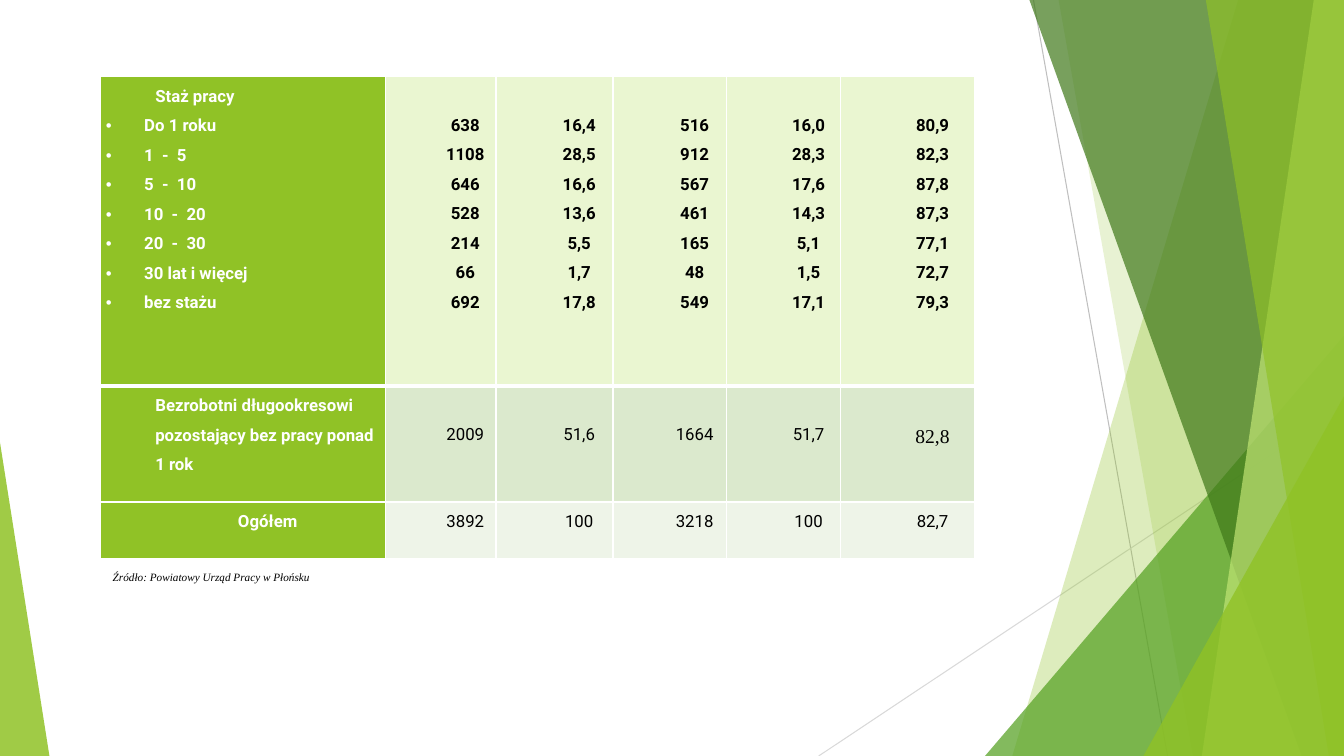
from lxml.etree import SubElement
from pptx import Presentation
from pptx.dml.color import RGBColor
from pptx.enum.shapes import MSO_CONNECTOR, MSO_SHAPE
from pptx.enum.text import MSO_AUTO_SIZE, PP_ALIGN
from pptx.oxml.ns import qn
from pptx.util import Inches, Pt

GREEN, WHITE, BLACK = "90C226", "FFFFFF", "000000"
COLUMN_WIDTHS = [2.82, 1.1, 1.16, 1.13, 1.13, 1.33]
ROW_HEIGHTS = [3.07, 1.15, 0.56]
ROW_FILLS = ["EAF6D1", "DBE9CD", "EEF4E8"]
LINE_HEIGHT = 0.29
TENURE = [
    ("Do 1 roku", "638", "16,4", "516", "16,0", "80,9"),
    ("1  -  5", "1108", "28,5", "912", "28,3", "82,3"),
    ("5  -  10", "646", "16,6", "567", "17,6", "87,8"),
    ("10  -  20", "528", "13,6", "461", "14,3", "87,3"),
    ("20  -  30", "214", "5,5", "165", "5,1", "77,1"),
    ("30 lat i więcej", "66", "1,7", "48", "1,5", "72,7"),
    ("bez stażu", "692", "17,8", "549", "17,1", "79,3"),
]
LONG_TERM = ["2009", "51,6", "1664", "51,7", "82,8"]
TOTAL = ["3892", "100", "3218", "100", "82,7"]


def color(value):
    """Turn a hex string into a colour."""
    return RGBColor.from_string(value)


def paint(shape, fill, opacity):
    """Give a shape a translucent fill with no line and no shadow."""
    shape.shadow.inherit = False
    shape.line.fill.background()
    shape.fill.solid()
    shape.fill.fore_color.rgb = color(fill)
    element = shape.fill._xPr.find(qn("a:solidFill"))[0]
    SubElement(element, qn("a:alpha"), val=str(opacity * 1000))


def add_band(slide, points, fill, opacity):
    """Draw a translucent polygon."""
    corners = [(Inches(x), Inches(y)) for x, y in points]
    builder = slide.shapes.build_freeform(*corners[0])
    builder.add_line_segments(corners[1:], close=True)
    paint(builder.convert_to_shape(), fill, opacity)


def add_triangle(slide, box, apex, fill, opacity):
    """Draw a translucent triangle with its apex at a share of the width."""
    shape = slide.shapes.add_shape(MSO_SHAPE.ISOSCELES_TRIANGLE, *map(Inches, box))
    shape.adjustments[0] = apex
    paint(shape, fill, opacity)


def add_line(slide, points, line_color):
    """Draw a thin straight line."""
    line = slide.shapes.add_connector(MSO_CONNECTOR.STRAIGHT, *map(Inches, points))
    line.line.color.rgb = color(line_color)
    line.line.width = Pt(0.75)
    SubElement(line._element.spPr, qn("a:effectLst"))


def write(frame, text, size=12, font="Roboto", text_color=BLACK, bold=False, italic=False,
          align=PP_ALIGN.LEFT, left=0.49, indent=0, bullet=None):
    """Add a formatted paragraph, using the first one while it is empty."""
    paragraph = frame.paragraphs[0]
    if paragraph.runs:
        paragraph = frame.add_paragraph()
    paragraph.alignment = align
    paragraph.line_spacing = 1.5
    properties = paragraph._p.get_or_add_pPr()
    properties.set("marL", str(Inches(left)))
    properties.set("indent", str(Inches(indent)))
    if bullet:
        SubElement(properties, qn("a:buFont"), typeface="Arial")
        SubElement(properties, qn("a:buChar"), char=bullet)
    run = paragraph.add_run()
    run.text = text
    run.font.size = Pt(size)
    run.font.name = font
    run.font.bold = bold
    run.font.italic = italic
    run.font.color.rgb = color(text_color)


def add_border(cell, side, width):
    """Draw a white border on one side of a cell."""
    properties = cell._tc.get_or_add_tcPr()
    line = SubElement(properties, qn(f"a:ln{side}"), w=str(Pt(width)))
    SubElement(SubElement(line, qn("a:solidFill")), qn("a:srgbClr"), val=WHITE)


def format_cell(cell, fill, top_width, bottom_width):
    """Set the margins, borders and fill of a cell."""
    cell.margin_left = cell.margin_right = Inches(0.05)
    cell.margin_top = cell.margin_bottom = 0
    for side, width in zip("LRTB", (1, 1, top_width, bottom_width)):
        add_border(cell, side, width)
    cell.fill.solid()
    cell.fill.fore_color.rgb = color(fill)


def add_grid(slide):
    """Add the empty table with its widths, heights and fills."""
    table = slide.shapes.add_table(
        len(ROW_HEIGHTS), len(COLUMN_WIDTHS), Inches(1), Inches(0.76),
        Inches(sum(COLUMN_WIDTHS)), Inches(sum(ROW_HEIGHTS))).table
    table.first_row = table.horz_banding = False
    for column, width in zip(table.columns, COLUMN_WIDTHS):
        column.width = Inches(width)
    for index, height in enumerate(ROW_HEIGHTS):
        table.rows[index].height = Inches(height)
        for position, cell in enumerate(table.rows[index].cells):
            format_cell(cell, ROW_FILLS[index] if position else GREEN,
                        3 if index == 1 else 1, 3 if index == 0 else 1)
    return table


def fill_table(table):
    """Write the headings and the figures."""
    heading = {"text_color": WHITE, "bold": True}
    labels, *columns = zip(*TENURE)
    frame = table.cell(0, 0).text_frame
    write(frame, "Staż pracy", **heading)
    for label in labels:
        write(frame, label, left=0.38, indent=-0.38, bullet="•", **heading)
    write(table.cell(1, 0).text_frame,
          "Bezrobotni długookresowi pozostający bez pracy ponad 1 rok", **heading)
    write(table.cell(2, 0).text_frame, "Ogółem", align=PP_ALIGN.CENTER, **heading)
    for position, values in enumerate(zip(columns, LONG_TERM, TOTAL), 1):
        tenure, long_term, total = values
        for row in (0, 1):
            table.cell(row, position).margin_top = Inches(LINE_HEIGHT)
        for value in tenure:
            write(table.cell(0, position).text_frame, value, bold=True, align=PP_ALIGN.CENTER)
        accent = {"size": 14, "font": "Times New Roman"} if position == len(columns) else {}
        write(table.cell(1, position).text_frame, long_term, align=PP_ALIGN.CENTER, **accent)
        write(table.cell(2, position).text_frame, total, align=PP_ALIGN.CENTER)


def add_source(slide):
    """Add the source note under the table."""
    box = slide.shapes.add_textbox(Inches(0.53), Inches(5.54), Inches(6.67), Inches(0.28))
    box.text_frame.word_wrap = True
    box.text_frame.auto_size = MSO_AUTO_SIZE.SHAPE_TO_FIT_TEXT
    write(box.text_frame, "Źródło: Powiatowy Urząd Pracy w Płońsku", size=8,
          font="Times New Roman", italic=True, align=PP_ALIGN.JUSTIFY, left=0, indent=0.49)


def add_decoration(slide):
    """Draw the green facets at the slide edges."""
    def add_facet(top, bottom, fill, opacity):
        """Draw a band from a slanted left side to the right slide edge."""
        add_band(slide, [(top, 0), (13.33, 0), (13.33, 7.5), (bottom, 7.5)], fill, opacity)

    add_line(slide, (10.25, 0, 11.58, 7.5), "BFBFBF")
    add_line(slide, (13.33, 4.03, 8.12, 7.5), "D9D9D9")
    add_facet(12.28, 10.04, GREEN, 30)
    add_facet(10.5, 11.83, GREEN, 20)
    add_triangle(slide, (9.77, 3.33, 3.56, 4.17), 1, "54A021", 72)
    add_facet(10.21, 12.91, "3F7819", 70)
    add_facet(13.03, 11.92, "C0E474", 70)
    add_facet(11.96, 13.18, GREEN, 65)
    add_triangle(slide, (11.34, 3.93, 1.99, 3.57), 1, GREEN, 80)
    add_triangle(slide, (0, 4.39, 0.49, 3.11), 0, GREEN, 85)


def main():
    """Build and save the slide."""
    presentation = Presentation()
    presentation.slide_width = Inches(13.33)
    presentation.slide_height = Inches(7.5)
    slide = presentation.slides.add_slide(presentation.slide_layouts[6])
    add_decoration(slide)
    fill_table(add_grid(slide))
    add_source(slide)
    presentation.save("out.pptx")


if __name__ == "__main__":
    main()
